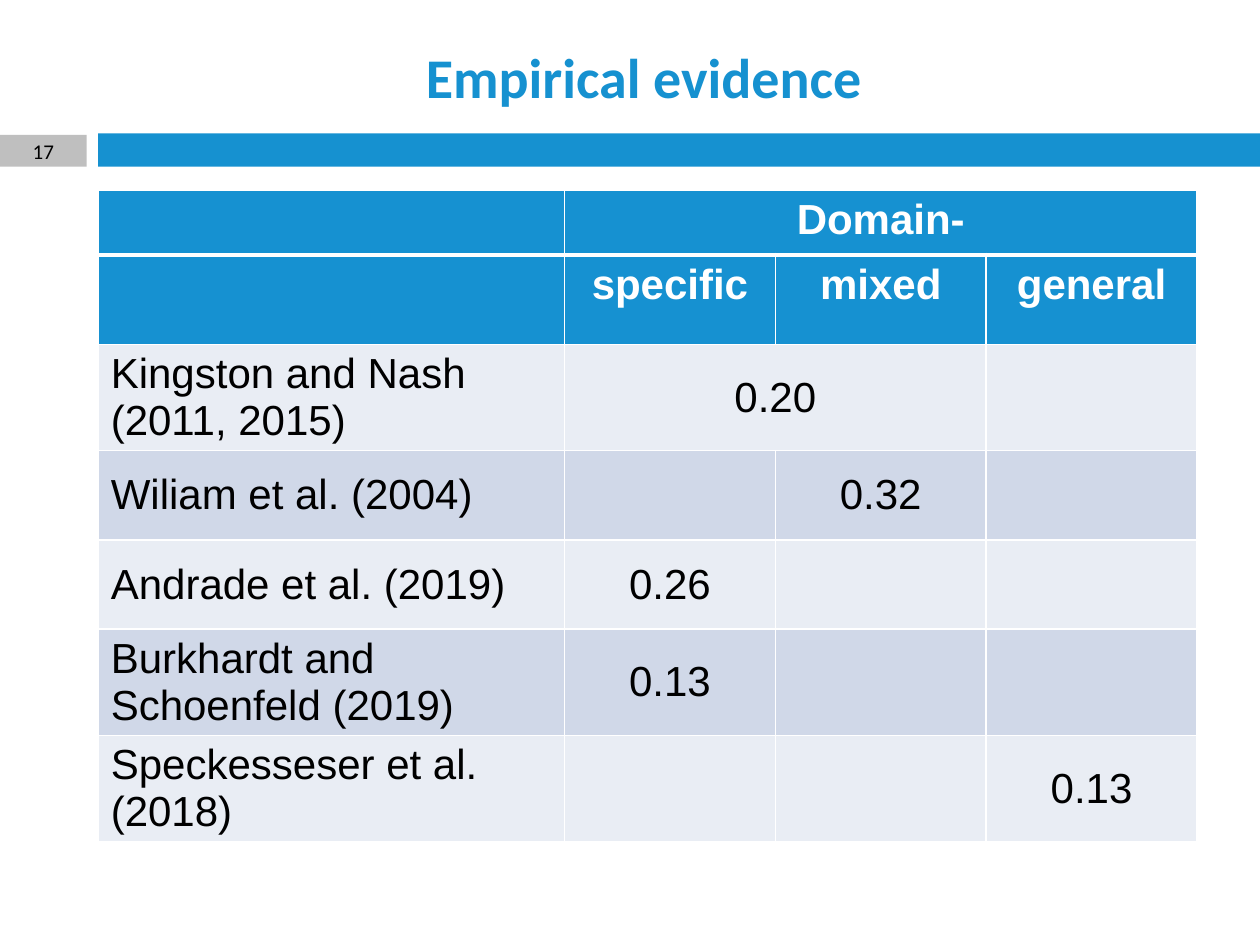
from lxml import etree
from pptx import Presentation
from pptx.dml.color import RGBColor
from pptx.enum import shapes, text
from pptx.oxml import ns
from pptx.util import Cm, Pt

BLUE, GREY, WHITE, BLACK = "1691D0", "BFBFBF", "FFFFFF", "000000"
HEADER, BANDS = "1691D1", ("E9EDF4", "D0D8E8")
LEFT = Cm(1.98)


def style(para, name, size, colour, bold=False, align=text.PP_ALIGN.CENTER):
    para.alignment = align
    para.font.name = name
    para.font.size = Pt(size)
    para.font.bold = bold
    para.font.color.rgb = RGBColor.from_string(colour)


def add_border(cell, side, points):
    line = etree.SubElement(cell._tc.get_or_add_tcPr(), ns.qn(f"a:ln{side}"), w=str(Pt(points)))
    fill = etree.SubElement(line, ns.qn("a:solidFill"))
    etree.SubElement(fill, ns.qn("a:srgbClr"), val=WHITE)


deck = Presentation()
deck.slide_width, deck.slide_height = Cm(25.4), Cm(19.05)
page = deck.slides.add_slide(deck.slide_layouts[5])

title = page.shapes.title
title.left, title.top, title.width, title.height = LEFT, Cm(0.66), Cm(22), Cm(1.73)
title.text_frame.text = "Empirical evidence"
title.text_frame.vertical_anchor = text.MSO_ANCHOR.MIDDLE
style(title.text_frame.paragraphs[0], "Calibri", 32, BLUE, True)

bars = []
for left, top, width, height, colour in (
    (LEFT, Cm(2.69), deck.slide_width - LEFT, Cm(0.67), BLUE),
    (0, Cm(2.72), Cm(1.75), Cm(0.64), GREY),
):
    bar = page.shapes.add_shape(shapes.MSO_SHAPE.RECTANGLE, left, top, width, height)
    bar.shadow.inherit = False
    bar.fill.solid()
    bar.fill.fore_color.rgb = RGBColor.from_string(colour)
    bar.line.fill.background()
    bars.append(bar)

number = bars[1].text_frame
number.text = "17"
number.vertical_anchor = text.MSO_ANCHOR.MIDDLE
number.margin_top = number.margin_bottom = 0
style(number.paragraphs[0], "Calibri", 12, BLACK)

rows = [
    ("", "Domain-", "", ""),
    ("", "specific", "mixed", "general"),
    ("Kingston and Nash (2011, 2015)", "0.20", "", ""),
    ("Wiliam et al. (2004)", "", "0.32", ""),
    ("Andrade et al. (2019)", "0.26", "", ""),
    ("Burkhardt and Schoenfeld (2019)", "0.13", "", ""),
    ("Speckesseser et al. (2018)", "", "", "0.13"),
]
widths = [Cm(9.4)] + [Cm(4.25)] * 3
heights = [Cm(1.3)] + [Cm(1.8)] * 6
table = page.shapes.add_table(
    len(rows), len(widths), LEFT, Cm(3.84), sum(widths), sum(heights)
).table
table.first_row = table.horz_banding = False
for column, width in zip(table.columns, widths):
    column.width = width
for row, height in zip(table.rows, heights):
    row.height = height

for r, values in enumerate(rows):
    is_header = r < 2
    for c, value in enumerate(values):
        cell = table.cell(r, c)
        for side in "LRTB":
            thick = (r, side) in ((0, "B"), (1, "T"))
            add_border(cell, side, 3 if thick else 1)
        cell.fill.solid()
        cell.fill.fore_color.rgb = RGBColor.from_string(HEADER if is_header else BANDS[r % 2])
        cell.vertical_anchor = text.MSO_ANCHOR.TOP if is_header else text.MSO_ANCHOR.MIDDLE
        cell.text = value
        align = text.PP_ALIGN.CENTER if c else text.PP_ALIGN.LEFT
        style(cell.text_frame.paragraphs[0], "Arial", 24, WHITE if is_header else BLACK, is_header, align)

table.cell(0, 1).merge(table.cell(0, 3))
table.cell(2, 1).merge(table.cell(2, 2))

deck.save("out.pptx")
